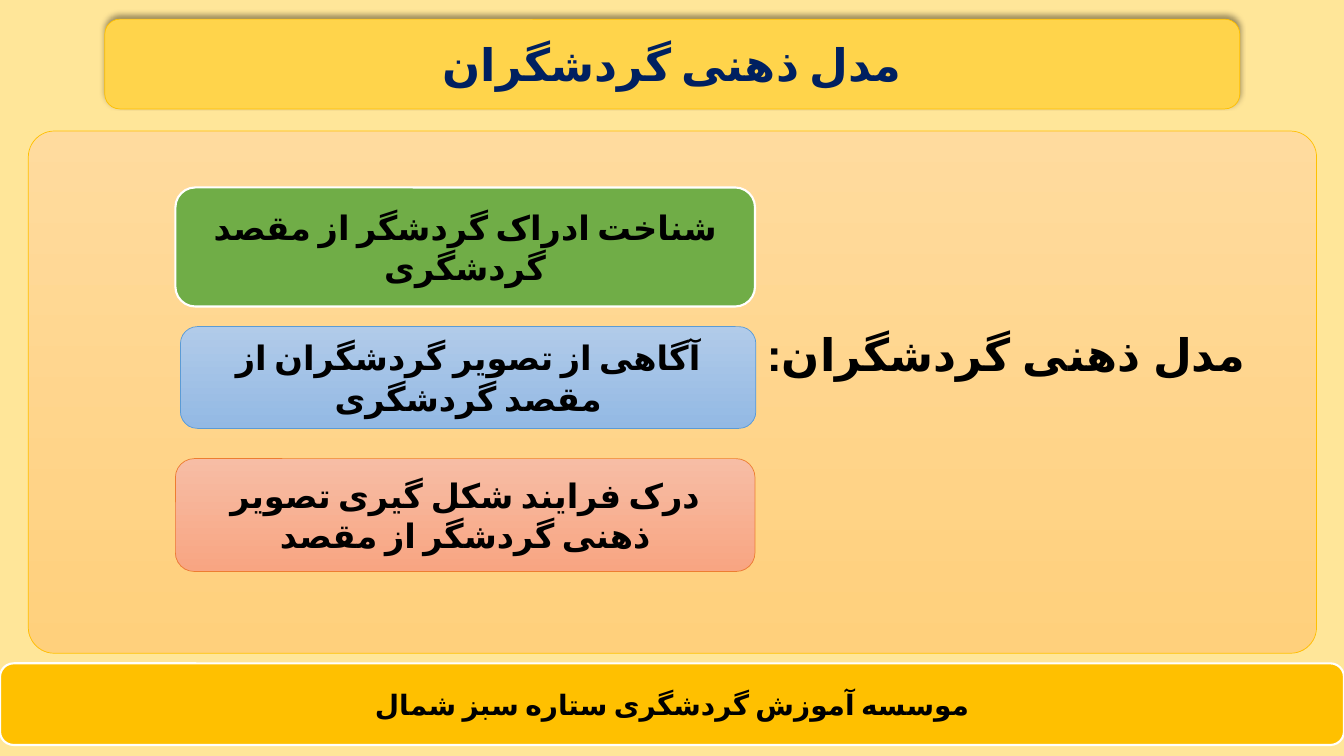
from lxml.etree import SubElement
from pptx import Presentation
from pptx.dml.color import RGBColor
from pptx.enum.shapes import MSO_SHAPE
from pptx.enum.text import MSO_ANCHOR, PP_ALIGN
from pptx.oxml.ns import qn
from pptx.util import Pt

COLORS = {
    "background": "FFE699",
    "text": "000000",
    "navy": "002060",
    "white": "FFFFFF",
    "gold": "FFC000",
    "title": "FFD44B",
    "green": "70AD47",
    "blue": "5B9BD5",
    "orange": "ED7D31",
    "panel_top": "FFDB9E",
    "panel_bottom": "FFD07C",
    "blue_top": "B1CBE9",
    "blue_bottom": "93B9E4",
    "orange_top": "F7BDA5",
    "orange_bottom": "F8A582",
}

GOALS = [
    ("شناخت ادراک گردشگر از مقصد گردشگری",
     (125.3, 133.9, 414, 85), ["green"], "white", 1.5),
    ("آگاهی از تصویر گردشگران از مقصد گردشگری",
     (128.9, 233.3, 411, 72.7), ["blue_top", "blue_bottom"], "blue", 0.5),
    ("درک فرایند شکل گیری تصویر ذهنی گردشگر از مقصد",
     (125.3, 327.6, 414, 80.6), ["orange_top", "orange_bottom"], "orange", 0.5),
]


def color(name):
    return RGBColor.from_string(COLORS[name])


def fill_shape(shape, fill_names):
    if len(fill_names) == 1:
        shape.fill.solid()
        shape.fill.fore_color.rgb = color(fill_names[0])
        return
    shape.fill.gradient()
    shape.fill.gradient_angle = 270
    for stop, name, position in zip(shape.fill.gradient_stops, fill_names, (0, 1)):
        stop.color.rgb = color(name)
        stop.position = position


def add_rounded_box(slide, box, fill_names, line_name, line_width):
    shape = slide.shapes.add_shape(MSO_SHAPE.ROUNDED_RECTANGLE, *map(Pt, box))
    shape.shadow.inherit = False
    fill_shape(shape, fill_names)
    shape.line.color.rgb = color(line_name)
    shape.line.width = Pt(line_width)
    return shape


def write_text(shape, text, size, font_name="Calibri", color_name="text",
               alignment=PP_ALIGN.CENTER):
    frame = shape.text_frame
    frame.word_wrap = True
    frame.vertical_anchor = MSO_ANCHOR.MIDDLE
    paragraph = frame.paragraphs[0]
    paragraph.alignment = alignment
    paragraph._p.get_or_add_pPr().set("rtl", "1")
    run = paragraph.add_run()
    run.text = text
    run.font.name = font_name
    run.font.size = Pt(size)
    run.font.bold = True
    run.font.color.rgb = color(color_name)
    properties = run._r.get_or_add_rPr()
    properties.set("lang", "fa-IR")
    SubElement(properties, qn("a:cs"), typeface=font_name)


def add_upward_shadow(shape):
    effects = shape._element.spPr.find(qn("a:effectLst"))
    shadow = SubElement(effects, qn("a:outerShdw"), blurRad=str(Pt(4)),
                        dist=str(Pt(3)), dir="16200000", algn="b", rotWithShape="0")
    shade = SubElement(shadow, qn("a:srgbClr"), val=COLORS["text"])
    SubElement(shade, qn("a:alpha"), val="40000")


def add_panel(slide):
    panel = add_rounded_box(slide, (20.2, 93.6, 920.2, 373),
                            ["panel_top", "panel_bottom"], "gold", 0.5)
    panel.adjustments[0] = 0.05
    write_text(panel, "مدل ذهنی گردشگران:", 32, "Arial", alignment=PP_ALIGN.RIGHT)
    panel.text_frame.margin_right = Pt(45)
    panel.text_frame.margin_bottom = Pt(58)


def main():
    presentation = Presentation()
    presentation.slide_width = Pt(960)
    presentation.slide_height = Pt(540)
    slide = presentation.slides.add_slide(presentation.slide_layouts[6])
    slide.background.fill.solid()
    slide.background.fill.fore_color.rgb = color("background")

    add_panel(slide)
    footer = add_rounded_box(slide, (0, 473.8, 960, 58.3), ["gold"], "white", 1.5)
    write_text(footer, "موسسه آموزش گردشگری ستاره سبز شمال", 20)
    title = add_rounded_box(slide, (74.9, 13.7, 810.7, 64.1), ["title"], "gold", 0.5)
    add_upward_shadow(title)
    write_text(title, "مدل ذهنی گردشگران", 32, color_name="navy")
    for text, box, fill_names, line_name, line_width in GOALS:
        goal = add_rounded_box(slide, box, fill_names, line_name, line_width)
        write_text(goal, text, 24)

    presentation.save("out.pptx")


if __name__ == "__main__":
    main()
